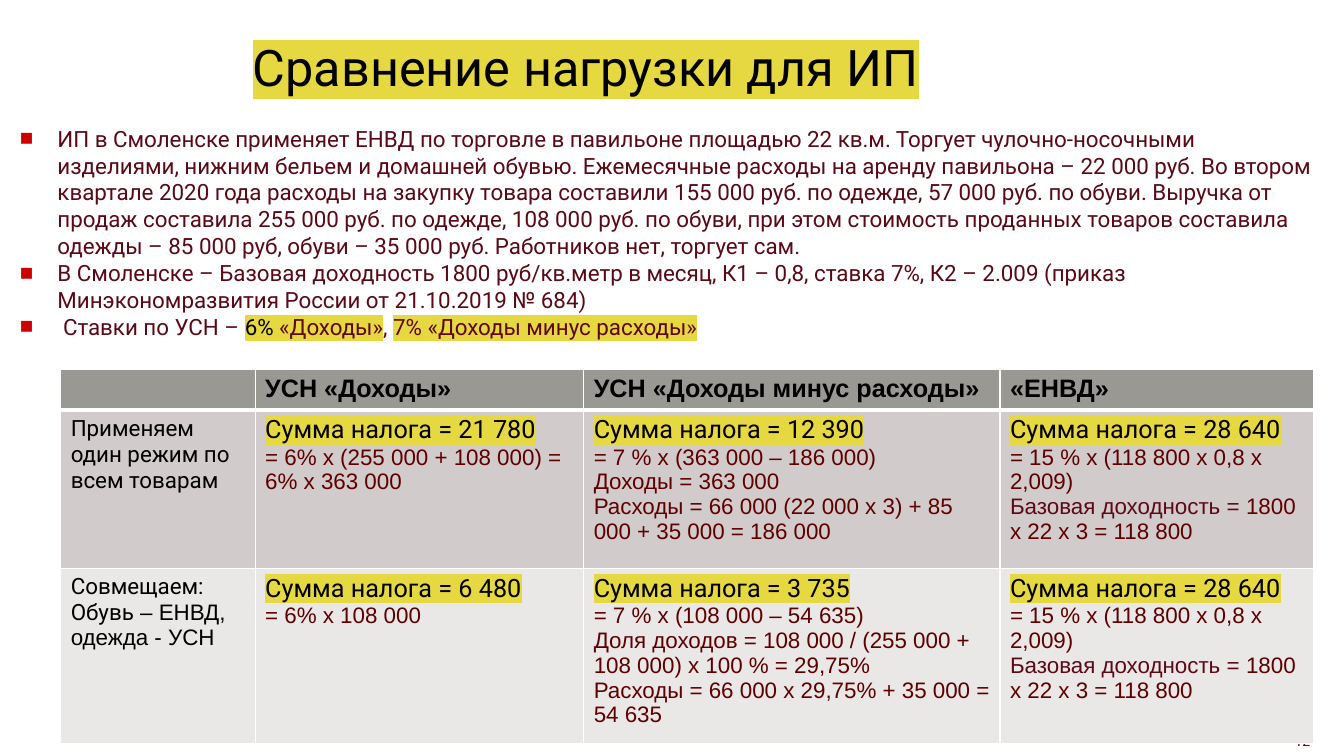
from lxml import etree
from pptx import Presentation
from pptx.dml.color import RGBColor
from pptx.enum.text import MSO_ANCHOR, MSO_AUTO_SIZE, PP_ALIGN
from pptx.oxml.ns import qn
from pptx.util import Cm, Pt

LEFT, RIGHT = PP_ALIGN.LEFT, PP_ALIGN.RIGHT
TOP, MIDDLE = MSO_ANCHOR.TOP, MSO_ANCHOR.MIDDLE
NO_AUTOFIT = MSO_AUTO_SIZE.NONE
TITLE_ONLY = 5

BLACK, WHITE, YELLOW = "000000", "FFFFFF", "E5D841"
WINE, MAROON, RED = "5B0917", "5F0000", "CC0000"
ROW_FILLS = ["999893", "D2CBCB", "EAE7E7"]

# Run formats
INTRO = dict(size=16, font="Roboto", color=WINE)
HEAD = dict(size=18, font="Arial", color=BLACK, bold=True)
LABEL = dict(size=16, font="Roboto", color=BLACK)
TOTAL = dict(size=18, font="Roboto", color=BLACK, highlight=YELLOW)
CALC = dict(size=16, font="Arial", color=MAROON)

BULLETS = [
    [("ИП в Смоленске применяет ЕНВД по торговле в павильоне площадью 22 кв.м. "
      "Торгует чулочно-носочными изделиями, нижним бельем и домашней обувью. "
      "Ежемесячные расходы на аренду павильона – 22 000 руб. Во втором квартале "
      "2020 года расходы на закупку товара составили 155 000 руб. по одежде, "
      "57 000 руб. по обуви. Выручка от продаж составила 255 000 руб. по одежде, "
      "108 000 руб. по обуви, при этом стоимость проданных товаров составила "
      "одежды – 85 000 руб, обуви – 35 000 руб. Работников нет, торгует сам.", INTRO)],
    [("В Смоленске – Базовая доходность 1800 руб/кв.метр в месяц, К1 – 0,8, "
      "ставка 7%, К2 – 2.009 (приказ Минэкономразвития России от 21.10.2019 № 684)",
      INTRO)],
    [(" Ставки по УСН – ", INTRO),
     ("6%", {**INTRO, "color": BLACK, "highlight": YELLOW}),
     (" «Доходы»", {**INTRO, "highlight": YELLOW}),
     (", ", INTRO),
     ("7% «Доходы минус расходы»", {**INTRO, "highlight": YELLOW})],
]


def tax(total, *lines):
    """Paragraphs of a result cell: the tax total, then its calculation."""
    return [[("Сумма налога = " + total, TOTAL)]] + [[(line, CALC)] for line in lines]


ENVD = tax("28 640", "= 15 % х (118 800 х 0,8 х 2,009)") + [
    [("Базовая доходность = ", {**CALC, "color": WINE}),
     ("1800 х 22 х 3 = 118 800", CALC)]]

ROWS = [
    [[], [[("УСН «Доходы»", HEAD)]], [[("УСН «Доходы минус расходы»", HEAD)]],
     [[("«ЕНВД»", HEAD)]]],
    [[[("Применяем один режим по всем товарам", LABEL)]],
     tax("21 780", "= 6% х (255 000 + 108 000) = 6% х 363 000"),
     tax("12 390", "= 7 % х (363 000 – 186 000)", "Доходы = 363 000",
         "Расходы = 66 000 (22 000 х 3) + 85 000 + 35 000 = 186 000"),
     ENVD],
    [[[("Совмещаем: Обувь", LABEL),
       (" – ЕНВД, одежда - УСН", {**LABEL, "font": "Arial"})]],
     tax("6 480", "= 6% х 108 000"),
     tax("3 735", "= 7 % х (108 000 – 54 635)",
         "Доля доходов = 108 000 / (255 000 + 108 000) х 100 % = 29,75%",
         "Расходы = 66 000 х 29,75% + 35 000 = 54 635"),
     ENVD],
]
COL_WIDTHS = [4.9, 8.28, 10.49, 7.9]
ROW_HEIGHTS = [1.02, 3.99, 4.32]


def rgb(value):
    return RGBColor.from_string(value)


def add_color(parent, tag, value):
    el = etree.SubElement(parent, qn(tag))
    etree.SubElement(el, qn("a:srgbClr"), val=value)
    return el


def add_run(p, text, *, size, font, color, bold=False, highlight=None):
    r = p.add_run()
    r.text = text
    r.font.size, r.font.bold = Pt(size), bold
    r.font.color.rgb = rgb(color)
    if highlight:
        add_color(r.font.fill._xPr, "a:highlight", highlight)
    r.font.name = font


def add_bullet(p):
    pPr = p._p.get_or_add_pPr()
    pPr.set("marL", str(Cm(0.95)))
    pPr.set("indent", str(-Cm(0.95)))
    add_color(pPr, "a:buClr", RED)
    etree.SubElement(pPr, qn("a:buFont"), typeface="Arial")
    etree.SubElement(pPr, qn("a:buChar"), char="■")


def fill_text(tf, paragraphs, align=LEFT, anchor=TOP, bullets=False):
    tf.word_wrap = True
    tf.vertical_anchor = anchor
    for i, runs in enumerate(paragraphs):
        p = tf.paragraphs[0] if i == 0 else tf.add_paragraph()
        p.alignment = align
        if bullets:
            add_bullet(p)
        for text, fmt in runs:
            add_run(p, text, **fmt)


def add_title(s, text):
    title = s.shapes.title
    title.left, title.top, title.width, title.height = Cm(6.12), Cm(0.71), Cm(17.73), Cm(2.21)
    tf = title.text_frame
    tf.auto_size = NO_AUTOFIT
    fill_text(tf, [[(text, {**TOTAL, "size": 36})]], anchor=MIDDLE)
    tf.paragraphs[0].line_spacing = 0.8


def add_text(s, left, top, width, height, paragraphs, **layout):
    box = s.shapes.add_textbox(Cm(left), Cm(top), Cm(width), Cm(height))
    fill_text(box.text_frame, paragraphs, **layout)


def set_borders(cell, top, bottom):
    tcPr = cell._tc.get_or_add_tcPr()
    sides = [("a:lnL", 1), ("a:lnR", 1), ("a:lnT", top), ("a:lnB", bottom)]
    for i, (tag, width) in enumerate(sides):
        ln = etree.Element(qn(tag), w=str(Pt(width)))
        add_color(ln, "a:solidFill", WHITE)
        tcPr.insert(i, ln)


def add_tax_table(s, left, top):
    frame = s.shapes.add_table(len(ROWS), len(COL_WIDTHS), Cm(left), Cm(top),
                               Cm(sum(COL_WIDTHS)), Cm(sum(ROW_HEIGHTS)))
    table = frame.table
    for column, width in zip(table.columns, COL_WIDTHS):
        column.width = Cm(width)
    for i, cells in enumerate(ROWS):
        table.rows[i].height = Cm(ROW_HEIGHTS[i])
        for j, paragraphs in enumerate(cells):
            cell = table.cell(i, j)
            cell.fill.solid()
            cell.fill.fore_color.rgb = rgb(ROW_FILLS[i])
            set_borders(cell, top=3 if i == 1 else 1, bottom=3 if i == 0 else 1)
            fill_text(cell.text_frame, paragraphs)


def main():
    prs = Presentation()
    prs.slide_width, prs.slide_height = Cm(33.87), Cm(19.05)
    s = prs.slides.add_slide(prs.slide_layouts[TITLE_ONLY])

    # Title and conditions
    add_title(s, "Сравнение нагрузки для ИП")
    add_text(s, 0.25, 3.02, 33.07, 14.6, BULLETS, bullets=True)

    # Slide number, partly under the table
    add_text(s, 31.14, 18.34, 2.13, 0.71, [[("12", {**INTRO, "size": 10})]], align=RIGHT)

    # Tax comparison
    add_tax_table(s, 1.53, 9.32)

    prs.save("out.pptx")


if __name__ == "__main__":
    main()
